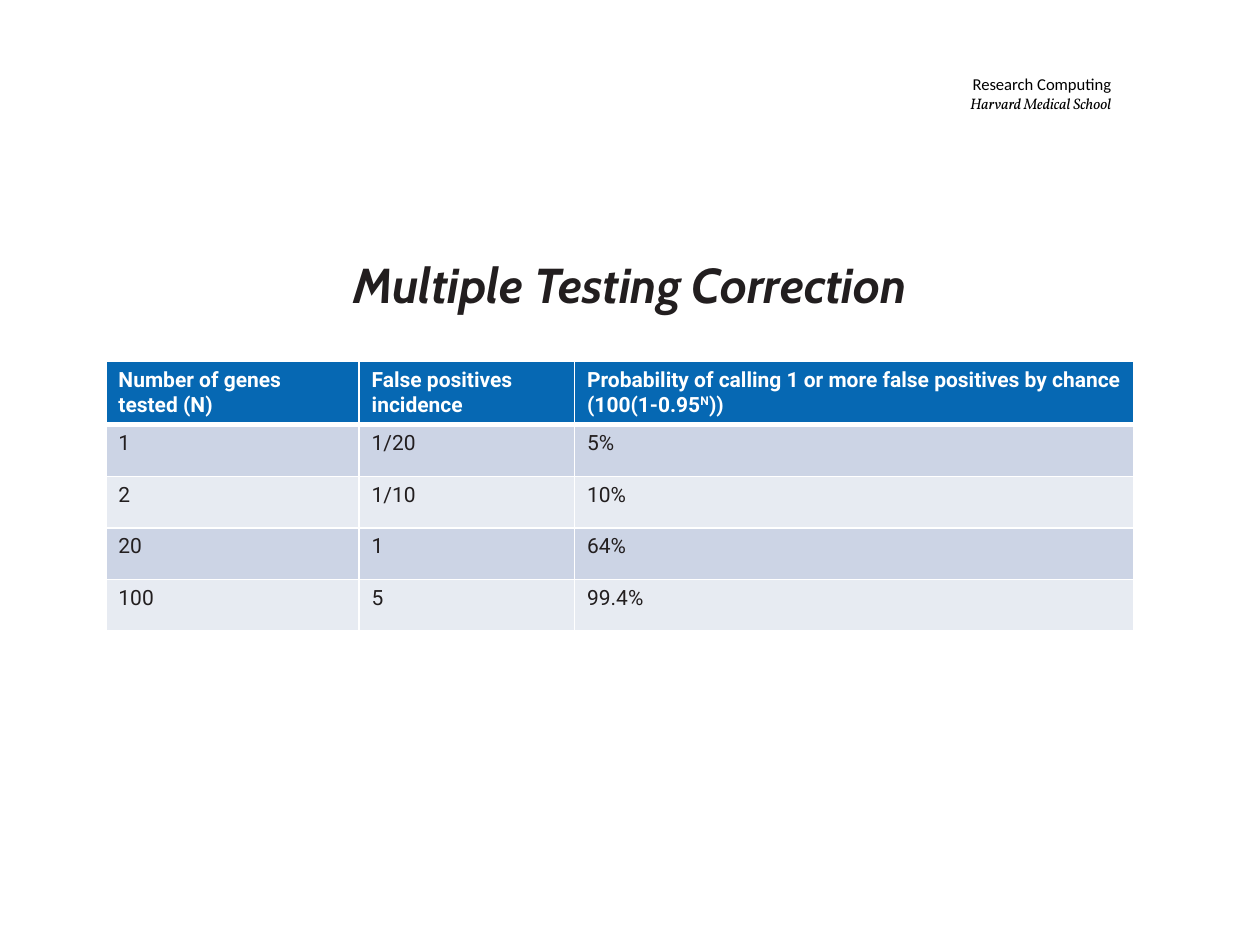
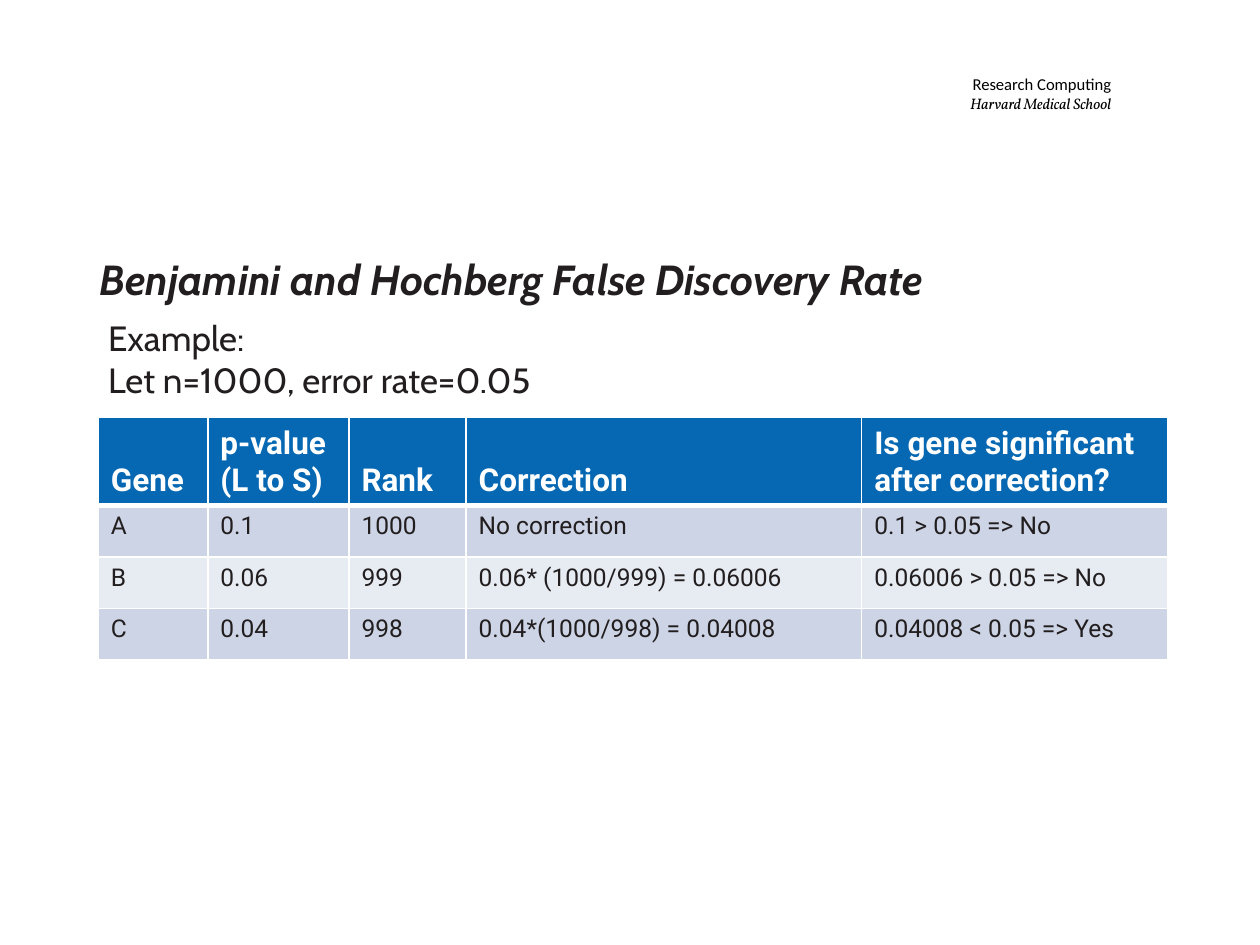
"""Build two slides on multiple testing correction and the false discovery rate."""
import lxml.etree
import pptx
import pptx.dml.color
import pptx.enum.text
import pptx.oxml.ns
import pptx.util

PX = 9144
COLORS = {"ink": "221E1F", "black": "000000", "white": "FFFFFF",
          "header": "0668B3", "odd": "CCD4E5", "even": "E7EBF2"}
ANCHOR = pptx.enum.text.MSO_ANCHOR
ALIGN = pptx.enum.text.PP_ALIGN
FIT = pptx.enum.text.MSO_AUTO_SIZE

STYLES = {
    "unit": ("black", {"name": "Calibri", "size": pptx.util.Pt(9.5)}),
    "school": ("black", {"name": "Vollkorn", "size": pptx.util.Pt(8.7), "italic": True}),
    "title": ("ink", {"name": "Cabin", "size": pptx.util.Pt(28), "bold": True, "italic": True}),
    "long title": ("ink", {"name": "Cabin", "size": pptx.util.Pt(24), "bold": True, "italic": True}),
    "example": ("ink", {"name": "Cabin", "size": pptx.util.Pt(20)}),
    "small head": ("white", {"name": "Roboto", "size": pptx.util.Pt(12), "bold": True}),
    "small cell": ("ink", {"name": "Roboto", "size": pptx.util.Pt(12), "bold": False}),
    "large head": ("white", {"name": "Roboto", "size": pptx.util.Pt(18), "bold": True}),
    "large cell": ("ink", {"name": "Roboto", "size": pptx.util.Pt(14), "bold": False}),
}


def write(frame, lines, align=ALIGN.LEFT):
    """Fill a frame with (text, style) lines; text between carets is superscript."""
    for number, (text, style) in enumerate(lines):
        paragraph = frame.add_paragraph() if number else frame.paragraphs[0]
        paragraph.alignment = align
        color, formats = STYLES[style]
        for part, words in enumerate(text.split("^")):
            run = paragraph.add_run()
            run.text = words
            for attribute, value in formats.items():
                setattr(run.font, attribute, value)
            run.font.color.rgb = pptx.dml.color.RGBColor.from_string(COLORS[color])
            if part % 2:
                run.font._element.set("baseline", "30000")


def add_border(cell, side, points):
    """Draw a white border on one side of a cell."""
    line = lxml.etree.SubElement(cell._tc.get_or_add_tcPr(), pptx.oxml.ns.qn(f"a:ln{side}"),
                                 w=str(pptx.util.Pt(points)))
    fill = lxml.etree.SubElement(line, pptx.oxml.ns.qn("a:solidFill"))
    lxml.etree.SubElement(fill, pptx.oxml.ns.qn("a:srgbClr"), val=COLORS["white"])


SLIDES = [
    {
        "texts": [
            ((0, 197, 1000, 57), ALIGN.CENTER, [("Multiple Testing Correction", "title")]),
        ],
        "table": (84, 287, 212), "columns": [201, 171, 444],
        "size": "small", "head anchor": ANCHOR.TOP,
        "rows": [
            ["Number of genes\ntested (N)", "False positives\nincidence",
             "Probability of calling 1 or more false positives by chance (100(1-0.95^N^))"],
            ["1", "1/20", "5%"],
            ["2", "1/10", "10%"],
            ["20", "1", "64%"],
            ["100", "5", "99.4%"],
        ],
    },
    {
        "texts": [
            ((69, 196, 858, 50), ALIGN.LEFT,
             [("Benjamini and Hochberg False Discovery Rate", "long title")]),
            ((76, 246, 463, 77), ALIGN.LEFT,
             [("Example:", "example"), ("Let n=1000, error rate=0.05", "example")]),
        ],
        "table": (78, 331, 192), "columns": [87, 112, 93, 314, 243],
        "size": "large", "head anchor": ANCHOR.BOTTOM,
        "rows": [
            ["Gene", "p-value (L to S)", "Rank", "Correction",
             "Is gene significant after correction?"],
            ["A", "0.1", "1000", "No correction", "0.1 > 0.05 => No"],
            ["B", "0.06", "999", "0.06* (1000/999) = 0.06006", "0.06006 > 0.05 => No"],
            ["C", "0.04", "998", "0.04*(1000/998) = 0.04008", "0.04008 < 0.05 => Yes"],
        ],
    },
]
ROW_HEIGHT = 41

deck = pptx.Presentation()
deck.slide_width, deck.slide_height = 1000 * PX, 750 * PX

for content in SLIDES:
    slide = deck.slides.add_slide(deck.slide_layouts[6])

    letterhead = slide.shapes.add_textbox(637 * PX, 41 * PX, 253 * PX, 66 * PX).text_frame
    letterhead_format = {"word_wrap": True, "vertical_anchor": ANCHOR.MIDDLE,
                         "margin_left": 8 * PX, "margin_right": 8 * PX,
                         "margin_top": 4 * PX, "margin_bottom": 4 * PX}
    for attribute, value in letterhead_format.items():
        setattr(letterhead, attribute, value)
    write(letterhead, [("Research Computing", "unit"), ("Harvard Medical School", "school")],
          ALIGN.RIGHT)

    left, top, height = content["table"]
    rows, columns = content["rows"], content["columns"]
    results = slide.shapes.add_table(len(rows), len(columns), left * PX, top * PX,
                                     sum(columns) * PX, height * PX).table
    for column, width in zip(results.columns, columns):
        column.width = width * PX
    for r, row in enumerate(rows):
        results.rows[r].height = ROW_HEIGHT * PX
        is_head = r == 0
        style = f"{content['size']} {'head' if is_head else 'cell'}"
        band = "header" if is_head else "odd" if r % 2 else "even"
        borders = {"L": 1, "R": 1, "T": 1, "B": 3} if is_head else {"L": 1, "R": 1, "B": 1}
        for c, text in enumerate(row):
            cell = results.cell(r, c)
            cell.vertical_anchor = content["head anchor"] if is_head else ANCHOR.TOP
            for side, points in borders.items():
                add_border(cell, side, points)
            cell.fill.solid()
            cell.fill.fore_color.rgb = pptx.dml.color.RGBColor.from_string(COLORS[band])
            write(cell.text_frame, [(line, style) for line in text.split("\n")])

    for box, align, lines in content["texts"]:
        frame = slide.shapes.add_textbox(*(length * PX for length in box)).text_frame
        frame.word_wrap = True
        frame.auto_size = FIT.SHAPE_TO_FIT_TEXT
        write(frame, lines, align)

deck.save("out.pptx")
